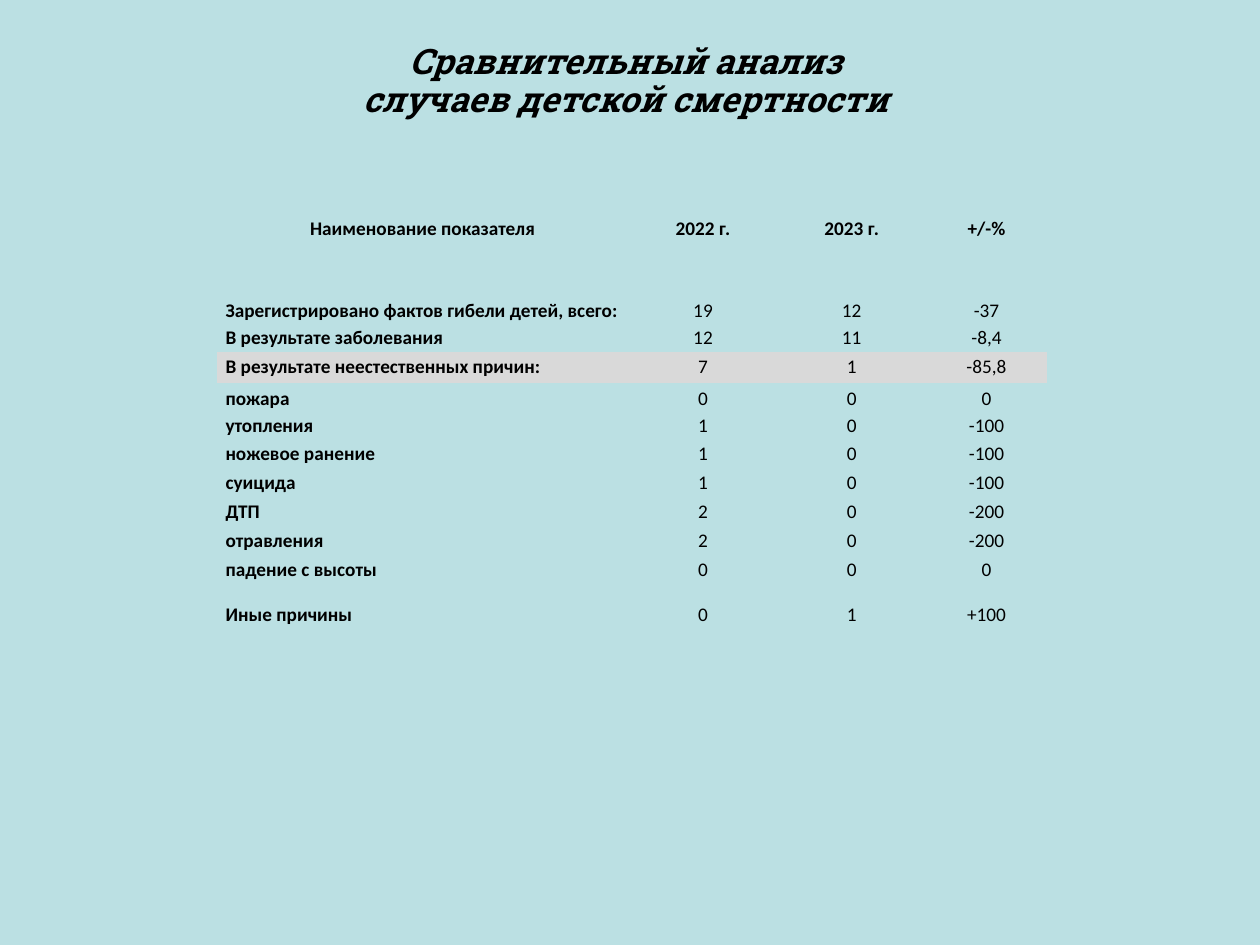
from pptx import Presentation
from pptx import util as u
from pptx.dml.color import RGBColor
from pptx.enum import text
from pptx.oxml import ns

PLAIN_STYLE = "{2D5ABB26-0587-4C30-8999-92F81FD0307C}"
HEADER = ("Наименование показателя", "2022 г.", "2023 г.", "+/-%")
CASES = [
    ("Зарегистрировано фактов гибели детей, всего:", "19", "12", "-37"),
    ("В результате заболевания", "12", "11", "-8,4"),
    ("В результате неестественных причин:", "7", "1", "-85,8"),
    ("пожара", "0", "0", "0"),
    ("утопления", "1", "0", "-100"),
    ("ножевое ранение", "1", "0", "-100"),
    ("суицида", "1", "0", "-100"),
    ("ДТП", "2", "0", "-200"),
    ("отравления", "2", "0", "-200"),
    ("падение с высоты\nИные причины", "0\n0", "0\n1", "0\n+100"),
]
COLUMN_WIDTHS = (3.27, 1.18, 1.18, 0.96)
ROW_HEIGHTS = (0.29, 0.55, 0.23, 0.25, 0.22, 0.22) + (0.23,) * 4 + (0.57,)
TOTAL_ROW, SUBTOTAL_ROW = 1, 3


def apply(target, **values):
    for name, value in values.items():
        setattr(target, name, value)


def color(value):
    return RGBColor.from_string(value)


def format_font(font, size, name, **values):
    apply(font, size=u.Pt(size), name=name, **values)
    font.color.rgb = color("000000")


def add_title(page, left, top, width, height):
    title = page.shapes.title
    apply(title, left=u.Inches(left), top=u.Inches(top),
          width=u.Inches(width), height=u.Inches(height))
    frame = title.text_frame
    apply(frame, auto_size=text.MSO_AUTO_SIZE.NONE, word_wrap=True,
          vertical_anchor=text.MSO_ANCHOR.TOP)
    para = frame.paragraphs[0]
    para.text = "Сравнительный анализ \vслучаев детской смертности "
    apply(para, alignment=text.PP_ALIGN.CENTER, line_spacing=0.9)
    for span in para.runs:
        format_font(span.font, 20, "Roboto Slab", bold=True, italic=True)


def fill_cell(cell, content, row, column):
    is_header = row == 0
    is_label = column == 0 and not is_header
    apply(cell, text=content, margin_left=u.Inches(0.07),
          margin_right=u.Inches(0.07), margin_top=0, margin_bottom=0,
          vertical_anchor=text.MSO_ANCHOR.BOTTOM if row == TOTAL_ROW
          else text.MSO_ANCHOR.TOP)
    if row == SUBTOTAL_ROW:
        cell.fill.solid()
        cell.fill.fore_color.rgb = color("D9D9D9")
    else:
        cell.fill.background()
    for para in cell.text_frame.paragraphs:
        para.alignment = (text.PP_ALIGN.JUSTIFY if is_label
                          else text.PP_ALIGN.CENTER)
        if not is_header:
            apply(para, line_spacing=1.15, space_after=u.Pt(10))
        for span in para.runs:
            format_font(span.font, 11, "Calibri", bold=is_header or is_label)


def add_case_table(page, left, top):
    records = [HEADER] + CASES
    frame = page.shapes.add_table(
        len(records), len(HEADER), u.Inches(left), u.Inches(top),
        u.Inches(sum(COLUMN_WIDTHS)), u.Inches(sum(ROW_HEIGHTS)))
    table = frame.table
    apply(table, first_row=False, horz_banding=False)
    style = frame._element.find(".//" + ns.qn("a:tableStyleId"))
    style.text = PLAIN_STYLE
    for column, width in zip(table.columns, COLUMN_WIDTHS):
        column.width = u.Inches(width)
    for row, height in zip(table.rows, ROW_HEIGHTS):
        row.height = u.Inches(height)
    for row, record in enumerate(records):
        for column, content in enumerate(record):
            fill_cell(table.cell(row, column), content, row, column)


def main():
    deck = Presentation()
    apply(deck, slide_width=u.Inches(10), slide_height=u.Inches(7.5))
    page = deck.slides.add_slide(deck.slide_layouts[5])
    page.background.fill.solid()
    page.background.fill.fore_color.rgb = color("BBE0E3")
    add_title(page, 0.5, 0.3, 9, 0.87)
    add_case_table(page, 1.72, 1.72)
    deck.save("out.pptx")


if __name__ == "__main__":
    main()
